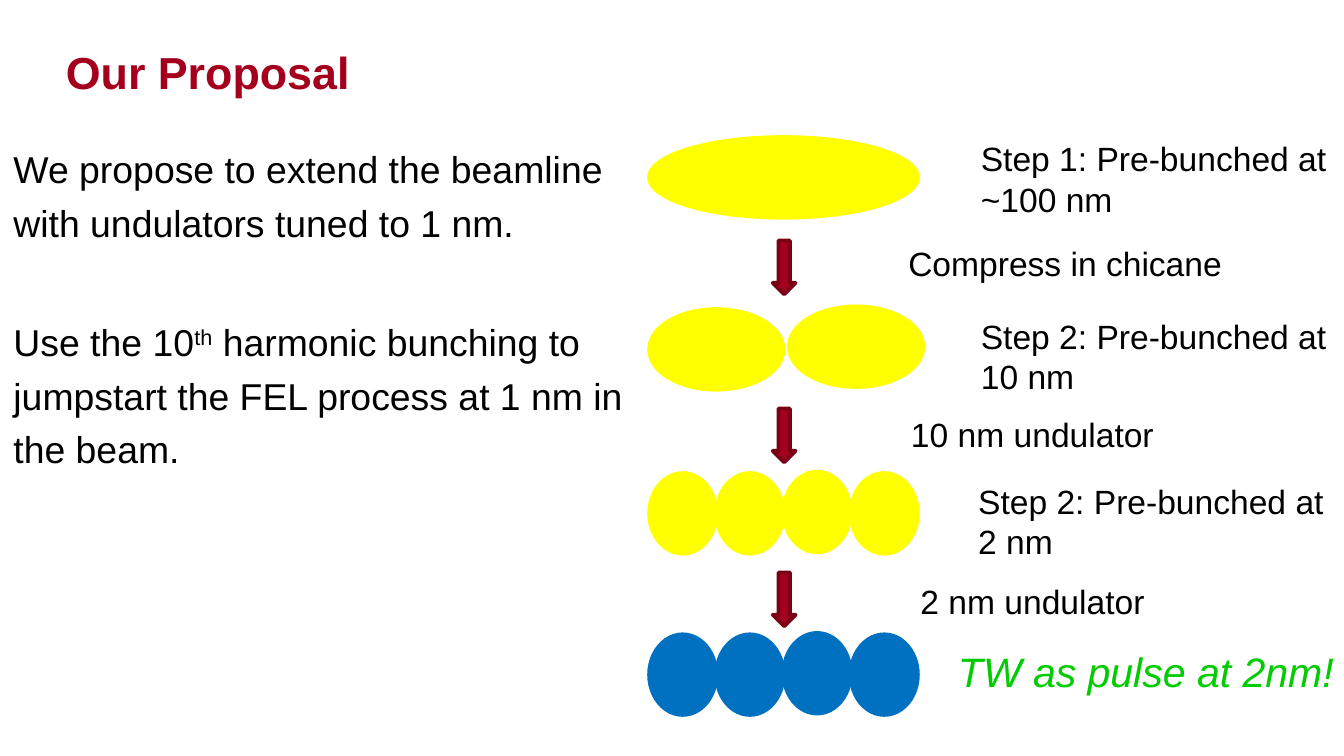
from pptx import Presentation
from pptx.dml.color import RGBColor
from pptx.enum.shapes import MSO_SHAPE
from pptx.enum.text import MSO_ANCHOR, MSO_AUTO_SIZE, PP_ALIGN
from pptx.util import Inches, Pt
from lxml import etree

COLORS = {"red": "A4001D", "dark_red": "790015", "yellow": "FFFF00",
          "blue": "0070C0", "green": "00CC00", "black": "000000"}

# Content
TITLE = "Our Proposal"
# Each paragraph is a list of (text, superscript)
BODY = [
    [("We propose to extend the beamline with undulators tuned to 1 nm.", False)],
    [("Use the 10", False), ("th", True),
     (" harmonic bunching to jumpstart the FEL process at 1 nm in the beam.", False)],
]
# Bunch rows: colour, bunch width, (left, top) of each bunch
LEFT, BUNCH_H = 4.83, 0.6


def quarter_row(top):
    return [(LEFT + 0.5 * i, top - (0.01 if i == 2 else 0)) for i in range(4)]


BUNCH_ROWS = [
    ("yellow", 2, [(LEFT, 1.02)]),
    ("yellow", 1, [(LEFT, 2.3), (5.87, 2.28)]),
    ("yellow", 0.5, quarter_row(3.52)),
    ("blue", 0.5, quarter_row(4.72)),
]
ARROW_TOPS = [1.79, 3.04, 4.26]
# Labels: text, left, top, width, height
STEPS = [
    ("Step 1: Pre-bunched at ~100 nm", 7.2, 0.98, 2.8, 0.71),
    ("Step 2: Pre-bunched at 10 nm", 7.2, 2.3, 2.8, 0.71),
    ("Step 2: Pre-bunched at 2 nm", 7.18, 3.53, 2.8, 0.71),
]
PROCESSES = [
    ("Compress in chicane", 6.66, 1.76, 2.56, 0.4),
    ("10 nm undulator", 6.68, 3.03, 2.03, 0.4),
    ("2 nm undulator", 6.75, 4.27, 1.88, 0.4),
]
RESULT = ("TW as pulse at 2nm!", 7.03, 4.76, 3.03, 0.47)


def rgb(name):
    return RGBColor.from_string(COLORS[name])


def style(r, size, color="black", bold=False, italic=False):
    r.font.name = "Arial"
    r.font.size = Pt(size)
    r.font.color.rgb = rgb(color)
    r.font.bold, r.font.italic = bold, italic


def place(sp, left, top, width, height, anchor):
    sp.left, sp.top = Inches(left), Inches(top)
    sp.width, sp.height = Inches(width), Inches(height)
    tf = sp.text_frame
    tf.margin_left = tf.margin_right = tf.margin_top = tf.margin_bottom = 0
    tf.vertical_anchor = anchor
    tf.auto_size = MSO_AUTO_SIZE.NONE
    return tf


def add_shape(s, kind, left, top, width, height, fill, line):
    sp = s.shapes.add_shape(kind, Inches(left), Inches(top), Inches(width), Inches(height))
    sp.shadow.inherit = False
    sp.fill.solid()
    sp.fill.fore_color.rgb = rgb(fill)
    sp.line.color.rgb = rgb(line)
    sp.line.width = Pt(2)


def add_label(s, label, wrap, size=18, color="black", italic=False):
    text, *box = label
    tf = s.shapes.add_textbox(*map(Inches, box)).text_frame
    tf.word_wrap = wrap
    tf.auto_size = MSO_AUTO_SIZE.SHAPE_TO_FIT_TEXT
    tf.text = text
    style(tf.paragraphs[0].runs[0], size, color, italic=italic)


# Widescreen 16:9 slide
prs = Presentation()
prs.slide_width = Inches(10)
prs.slide_height = prs.slide_width * 9 // 16
s = prs.slides.add_slide(prs.slide_layouts[1])

# Title
tf = place(s.shapes.title, 0.49, 0.11, 8.86, 0.62, MSO_ANCHOR.BOTTOM)
tf.text = TITLE
tf.paragraphs[0].alignment = PP_ALIGN.LEFT
style(tf.paragraphs[0].runs[0], 24, "red", bold=True)

# Body
tf = place(s.placeholders[1], 0.1, 1.02, 4.83, 4.15, MSO_ANCHOR.TOP)
for i, parts in enumerate(BODY):
    p = tf.paragraphs[0] if i == 0 else tf.add_paragraph()
    pPr = p._p.get_or_add_pPr()
    pPr.set("marL", "0")
    pPr.set("indent", "0")
    etree.SubElement(pPr, "{http://schemas.openxmlformats.org/drawingml/2006/main}buNone")
    p.line_spacing = 1.2
    p.space_before = Pt(32 if i else 0)
    p.space_after = Pt(3)
    for text, superscript in parts:
        r = p.add_run()
        r.text = text
        style(r, 20)
        if superscript:
            r.font._element.set("baseline", "30000")

# Bunches and arrows between the stages
for color, width, spots in BUNCH_ROWS:
    for left, top in spots:
        add_shape(s, MSO_SHAPE.OVAL, left, top, width, BUNCH_H, color, color)
for top in ARROW_TOPS:
    add_shape(s, MSO_SHAPE.DOWN_ARROW, 5.75, top, 0.17, 0.4, "red", "dark_red")

# Labels
for label in STEPS:
    add_label(s, label, wrap=True)
for label in PROCESSES:
    add_label(s, label, wrap=False)
add_label(s, RESULT, wrap=False, size=22, color="green", italic=True)

prs.save("out.pptx")
